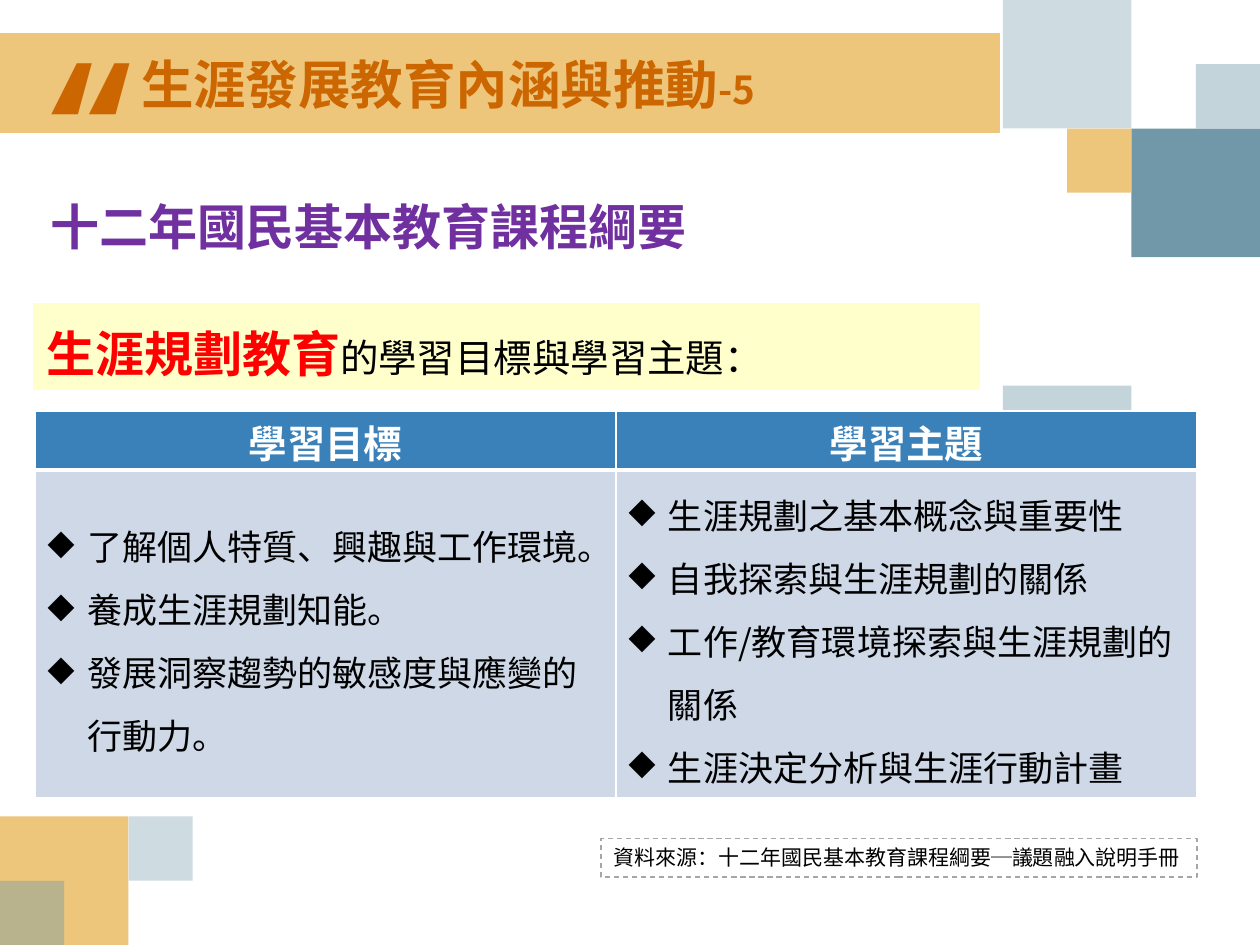
import pptx
import pptx.dml.color
import pptx.enum.dml
import pptx.enum.shapes
import pptx.enum.text
import pptx.oxml
import pptx.oxml.ns
import pptx.util
from lxml import etree

Pt = pptx.util.Pt
qn = pptx.oxml.ns.qn
ALIGN = pptx.enum.text.PP_ALIGN
ANCHOR = pptx.enum.text.MSO_ANCHOR
FONT = "Noto Sans CJK SC"
GOLD, TEAL, MIST = "EDC67B", "7198A9", "CEDBE0"
ORANGE, BLACK, WHITE = "CC6600", "000000", "FFFFFF"


def rgb(value):
    return pptx.dml.color.RGBColor.from_string(value)


def add_run(p, text, size=20, color=BLACK, bold=False, font=FONT):
    r = p.add_run()
    r.text = text
    r.font.size, r.font.bold, r.font.name = Pt(size), bold, font
    r.font.color.rgb = rgb(color)
    etree.SubElement(r._r.get_or_add_rPr(), qn("a:ea"), typeface=font)


class Deck:
    """Holds the style and the current slide, and draws each kind of element."""

    def __init__(self, width, height):
        self.prs = pptx.Presentation()
        self.prs.slide_width, self.prs.slide_height = Pt(width), Pt(height)
        self.s = self.prs.slides.add_slide(self.prs.slide_layouts[6])

    def rect(self, x, y, w, h, fill=None, line=None, alpha=None, dash=False):
        sp = self.s.shapes.add_shape(pptx.enum.shapes.MSO_SHAPE.RECTANGLE, Pt(x), Pt(y), Pt(w), Pt(h))
        sp.shadow.inherit = False
        if fill:
            sp.fill.solid()
            sp.fill.fore_color.rgb = rgb(fill)
        else:
            sp.fill.background()
        if alpha:
            clr = sp._element.spPr.find(".//" + qn("a:srgbClr"))
            etree.SubElement(clr, qn("a:alpha"), val=str(alpha * 1000))
        if line:
            sp.line.color.rgb = rgb(line)
            sp.line.width = Pt(0.75)
        else:
            sp.line.fill.background()
        if dash:
            sp.line.dash_style = pptx.enum.dml.MSO_LINE.DASH
        return sp

    def label(self, sp, runs, align=ALIGN.LEFT, anchor=ANCHOR.TOP, wrap=True):
        tf = sp.text_frame
        tf.word_wrap, tf.vertical_anchor = wrap, anchor
        p = tf.paragraphs[0]
        p.alignment = align
        for text, style in runs:
            add_run(p, text, **style)

    def text(self, x, y, w, h, *runs, **layout):
        sp = self.s.shapes.add_textbox(Pt(x), Pt(y), Pt(w), Pt(h))
        self.label(sp, runs, **layout)

    def cell(self, cell, fill, top, bottom):
        tcPr = cell._tc.get_or_add_tcPr()
        for side, width in (("L", 1), ("R", 1), ("T", top), ("B", bottom)):
            ln = etree.SubElement(tcPr, qn("a:ln" + side), w=str(Pt(width)))
            solid = etree.SubElement(ln, qn("a:solidFill"))
            etree.SubElement(solid, qn("a:srgbClr"), val=WHITE)
        cell.fill.solid()
        cell.fill.fore_color.rgb = rgb(fill)
        cell.vertical_anchor = ANCHOR.MIDDLE

    def bullets(self, tf, items):
        for i, item in enumerate(items):
            p = tf.add_paragraph() if i else tf.paragraphs[0]
            p.line_spacing = Pt(36)
            pPr = p._p.get_or_add_pPr()
            pPr.set("marL", str(Pt(22.5)))
            pPr.set("indent", str(-Pt(22.5)))
            etree.SubElement(pPr, qn("a:buChar"), char="◆")
            add_run(p, item)

    def table(self, x, y, col_width, heights, columns):
        frame = self.s.shapes.add_table(2, len(columns), Pt(x), Pt(y),
                                        Pt(col_width * len(columns)), Pt(sum(heights)))
        table = frame.table
        for row, height in zip(table.rows, heights):
            row.height = Pt(height)
        for i, (title, items) in enumerate(columns.items()):
            table.columns[i].width = Pt(col_width)
            head, body = table.cell(0, i), table.cell(1, i)
            self.cell(head, "3A81BA", 1, 3)
            head.margin_top, head.margin_bottom = Pt(1.8), 0
            p = head.text_frame.paragraphs[0]
            p.alignment = ALIGN.CENTER
            add_run(p, title, size=22, color=WHITE, bold=True)
            self.cell(body, "CED8E7", 3, 1)
            self.bullets(body.text_frame, items)


def main():
    width, height, u = 720, 540, 36.72
    right, bottom = width - 4 * u, height - 2 * u
    deck = Deck(width, height)
    for x, y, size, color, alpha in (
        (right, 0, 2, MIST, None),
        (right + 2 * u, 2 * u, 2, TEAL, None),
        (right, 6 * u, 2, TEAL, 41),
        (0, bottom, 2, GOLD, None),
        (2 * u, bottom, 1, MIST, None),
        (0, bottom + u, 1, TEAL, 41),
        (right + u, 2 * u, 1, GOLD, None),
        (right + 3 * u, u, 1, TEAL, 41),
    ):
        deck.rect(x, y, size * u, size * u, color, alpha=alpha)

    deck.rect(0, 19.5, 571, 56, GOLD, GOLD)
    deck.text(16, 6.5, 80.5, 124, ("“", dict(size=96, color=ORANGE, bold=True, font="Courier New")))
    deck.text(73.5, 19.5, 497, 56,
              ("生涯發展教育內涵與推動", dict(size=30, color=ORANGE, bold=True)),
              ("-5", dict(size=22, color=ORANGE, bold=True)), anchor=ANCHOR.MIDDLE)
    deck.text(19.5, 108.7, 382, 41,
              ("十二年國民基本教育課程綱要", dict(size=28, color="7030A0", bold=True)),
              align=ALIGN.CENTER, wrap=False)
    deck.rect(19.5, 173.5, 540, 49, "FFFFCC", "FFFFCC")
    deck.text(19.5, 181.5, 430.5, 41,
              ("生涯規劃教育", dict(size=28, color="FF0000", bold=True)),
              ("的學習目標與學習主題：", dict(size=22)))
    source = deck.rect(343.5, 479.3, 340.5, 21.8, line="A6A6A6", dash=True)
    deck.label(source, [("資料來源：十二年國民基本教育課程綱要─議題融入說明手冊", dict(size=12))])
    deck.table(20, 235, 332, (33.7, 187.2), {
        "學習目標": ("了解個人特質、興趣與工作環境。", "養成生涯規劃知能。",
                 "發展洞察趨勢的敏感度與應變的行動力。"),
        "學習主題": ("生涯規劃之基本概念與重要性", "自我探索與生涯規劃的關係",
                 "工作/教育環境探索與生涯規劃的關係", "生涯決定分析與生涯行動計畫"),
    })
    deck.prs.save("out.pptx")


if __name__ == "__main__":
    main()
